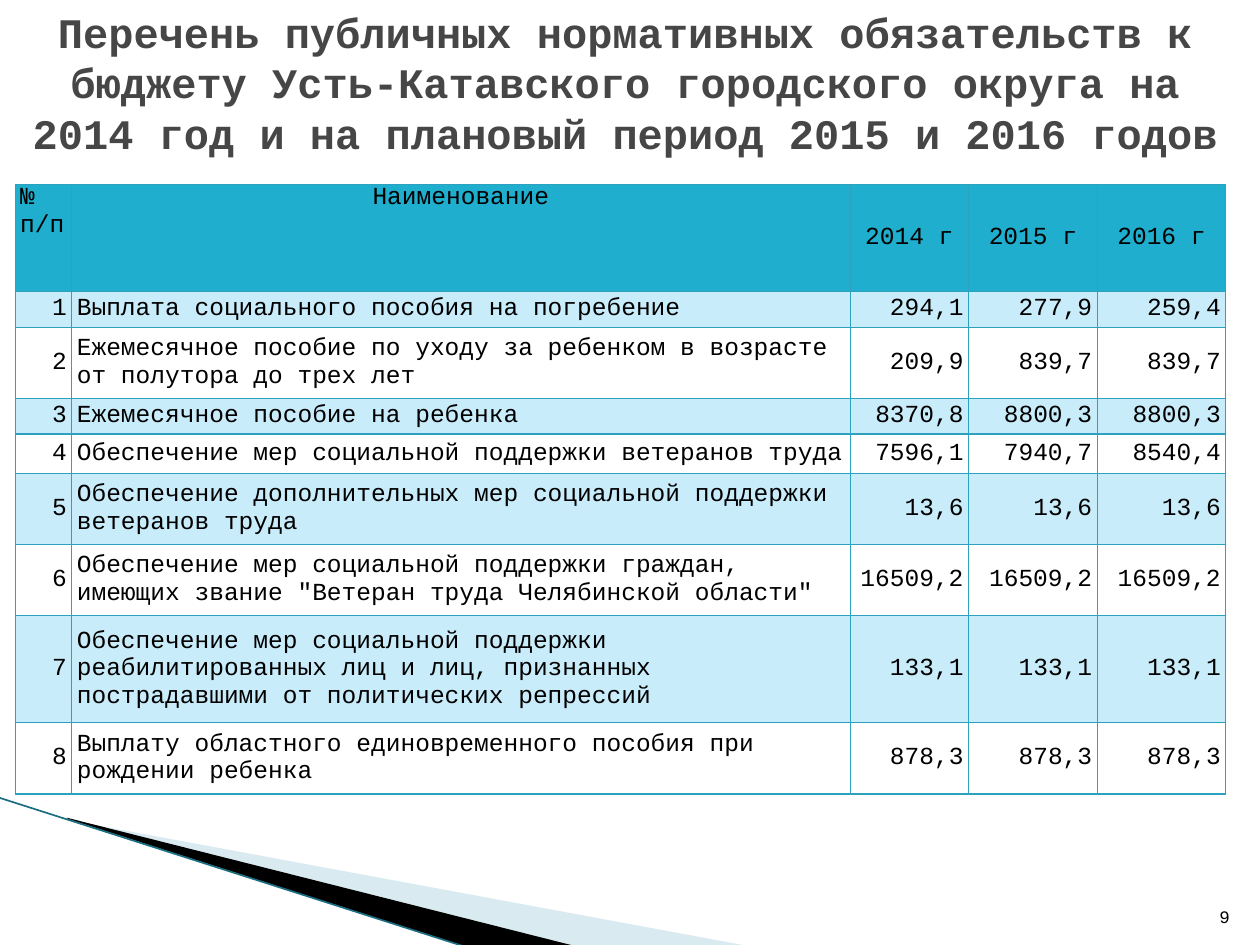
from lxml.etree import SubElement
from pptx import Presentation
from pptx.dml.color import RGBColor
from pptx.enum.shapes import MSO_CONNECTOR
from pptx.enum.text import MSO_ANCHOR, MSO_AUTO_SIZE, PP_ALIGN
from pptx.oxml import parse_xml
from pptx.oxml.ns import nsdecls, qn
from pptx.util import Inches, Pt

HUES = {"title": "464646", "text": "000000", "head": "1FAECD", "band": "C9ECFA",
        "plain": "FFFFFF", "edge": "2DA2BF", "pale": "A0CBDC", "line": "1A6E82"}
FACE = "Courier New"
WIDE, HIGH = Inches(10), Inches(7.5)
UNIT = WIDE / 100
COLS = [45, 617, 94, 102, 102]
LINES = [3, 1, 2, 1, 1.1, 2, 2, 3, 2]
HEAD = ["№ п/п", "Наименование", "2014 г", "2015 г", "2016 г"]
ROWS = [
    ["Выплата социального пособия на погребение", "294,1", "277,9", "259,4"],
    ["Ежемесячное пособие по уходу за ребенком в возрасте от полутора до трех лет",
     "209,9", "839,7", "839,7"],
    ["Ежемесячное пособие на ребенка", "8370,8", "8800,3", "8800,3"],
    ["Обеспечение мер социальной поддержки ветеранов труда",
     "7596,1", "7940,7", "8540,4"],
    ["Обеспечение дополнительных мер социальной поддержки ветеранов труда",
     "13,6", "13,6", "13,6"],
    ["Обеспечение мер социальной поддержки граждан, имеющих звание "
     "\"Ветеран труда Челябинской области\"", "16509,2", "16509,2", "16509,2"],
    ["Обеспечение мер социальной поддержки реабилитированных лиц и лиц, "
     "признанных пострадавшими от политических репрессий", "133,1", "133,1", "133,1"],
    ["Выплату областного единовременного пособия при рождении ребенка",
     "878,3", "878,3", "878,3"],
]
TITLE = ("Перечень публичных нормативных обязательств к бюджету Усть-Катавского "
         "городского округа на 2014 год и на плановый период 2015 и 2016 годов")


def hue(name):
    """Return the named colour."""
    return RGBColor.from_string(HUES[name])


def scale(*sizes):
    """Turn hundredths of the slide's width into lengths."""
    return [round(size * UNIT) for size in sizes]


def style(para, size, side, tint="text", bold=False):
    """Set the font and alignment of a paragraph."""
    para.alignment = side
    font = para.font
    font.name, font.size, font.bold = FACE, Pt(size), bold
    font.color.rgb = hue(tint)


def add_text(slide, box, text, size, side, anchor, **look):
    """Place one wrapped paragraph in a box."""
    frame = slide.shapes.add_textbox(*scale(*box)).text_frame
    frame.word_wrap = True
    frame.vertical_anchor = anchor
    frame.text = text
    style(frame.paragraphs[0], size, side, **look)
    return frame


def add_wedge(slide, left, top):
    """Draw the corner wedges and their edge line."""
    wedges = [("pale", 40, [(5.5, 1.8), (59.5, 11.8), (45.6, 11.8), (5.5, 1.7)]),
              ("text", 100, [(5.3, 1.6), (45.7, 11.8), (37.2, 11.9), (5.4, 1.7)])]
    for name, alpha, spots in wedges:
        dots = [scale(left + x, top + y) for x, y in spots]
        pen = slide.shapes.build_freeform(*dots[0])
        pen.add_line_segments(dots[1:])
        wedge = pen.convert_to_shape()
        wedge.shadow.inherit = False
        wedge.fill.solid()
        wedge.fill.fore_color.rgb = hue(name)
        wedge.line.fill.background()
        tint = wedge.fill._xPr.find(".//" + qn("a:srgbClr"))
        SubElement(tint, qn("a:alpha"), val=str(alpha * 1000))
    edge = slide.shapes.add_connector(
        MSO_CONNECTOR.STRAIGHT, *scale(left - 0.1, top, left + 37.1, top + 11.9))
    edge.line.color.rgb = hue("line")
    edge.line.width = Pt(0.95)
    SubElement(edge._element.spPr, qn("a:effectLst"))


def add_edges(cell):
    """Rule all four sides of a cell."""
    props = cell._tc.get_or_add_tcPr()
    for spot, side in enumerate("LRTB"):
        props.insert(spot, parse_xml(
            f'<a:ln{side} {nsdecls("a")} w="{Pt(0.75)}"><a:solidFill>'
            f'<a:srgbClr val="{HUES["edge"]}"/></a:solidFill></a:ln{side}>'))


def add_grid(slide, left, top, width, line):
    """Place the table, its rows sized by their lines of text."""
    rows = [HEAD] + [[str(num), *row] for num, row in enumerate(ROWS, 1)]
    box = scale(left, top, width, line * sum(LINES))
    table = slide.shapes.add_table(len(rows), len(COLS), *box).table
    table.horz_banding = False
    for col, part in zip(table.columns, COLS):
        col.width = round(box[2] * part / sum(COLS))
    for row, count in zip(table.rows, LINES):
        row.height = scale(line * count)[0]
    for r, row in enumerate(rows):
        for c, text in enumerate(row):
            cell = table.cell(r, c)
            cell.text = text
            cell.margin_left = cell.margin_right = Inches(0.04)
            cell.margin_top = cell.margin_bottom = 0
            high = r == 0 and c < 2
            cell.vertical_anchor = MSO_ANCHOR.TOP if high else MSO_ANCHOR.MIDDLE
            cell.fill.solid()
            cell.fill.fore_color.rgb = hue(
                "head" if r == 0 else "band" if r % 2 else "plain")
            if r == 0:
                side = PP_ALIGN.CENTER if c else PP_ALIGN.LEFT
            else:
                side = PP_ALIGN.LEFT if c == 1 else PP_ALIGN.RIGHT
            style(cell.text_frame.paragraphs[0], 14, side)
            add_edges(cell)


def main():
    """Build and save the slide."""
    deck = Presentation()
    deck.slide_width, deck.slide_height = WIDE, HIGH
    slide = deck.slides.add_slide(deck.slide_layouts[6])
    add_wedge(slide, 0, 63.3)
    add_text(slide, (94.6, 70.1, 4, 4), "9", 10, PP_ALIGN.RIGHT, MSO_ANCHOR.BOTTOM)
    add_grid(slide, 1.2, 14.65, 96.1, 2.83)
    title = add_text(slide, (0, 0, 99.2, 13.1), TITLE, 24, PP_ALIGN.CENTER,
                     MSO_ANCHOR.TOP, tint="title", bold=True)
    title.auto_size = MSO_AUTO_SIZE.SHAPE_TO_FIT_TEXT
    deck.save("out.pptx")


if __name__ == "__main__":
    main()
